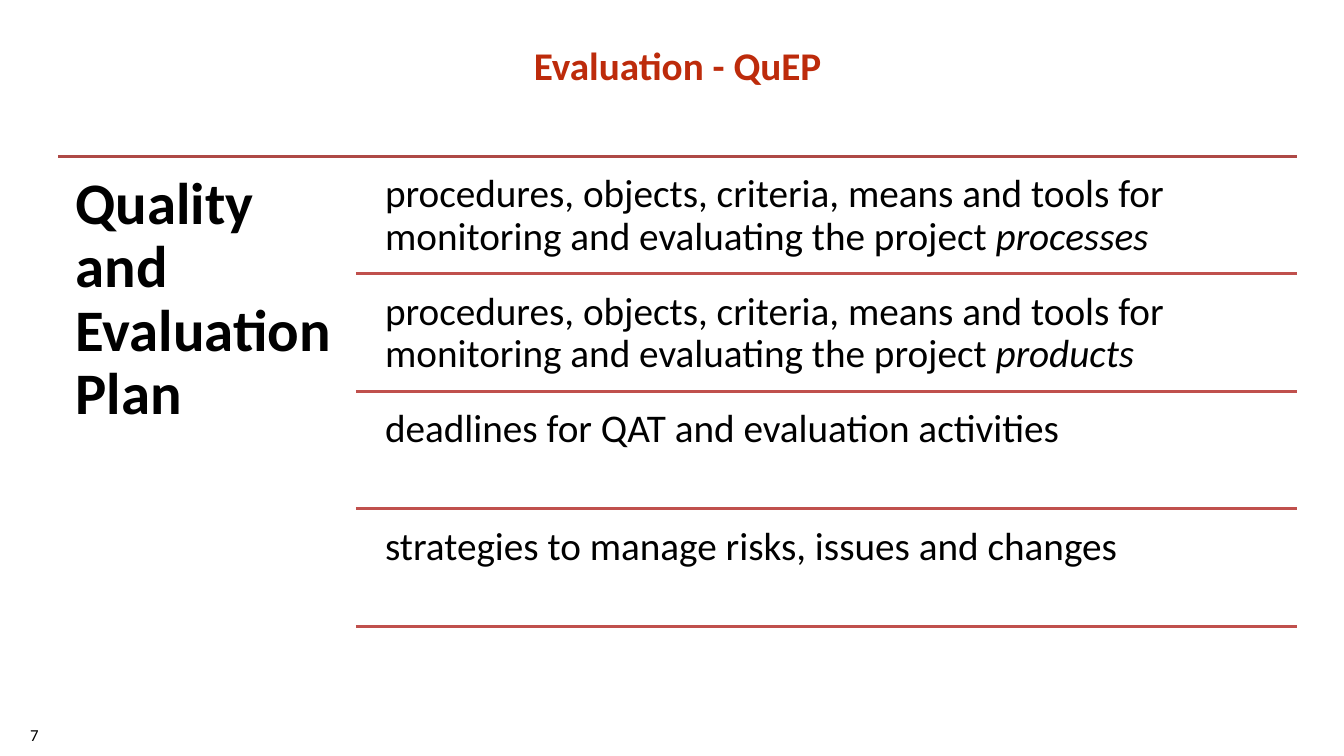
from lxml import etree
from pptx import Presentation
from pptx.dml.color import RGBColor
from pptx.enum.shapes import MSO_CONNECTOR
from pptx.enum.text import MSO_ANCHOR, MSO_AUTO_SIZE, PP_ALIGN
from pptx.oxml.ns import qn
from pptx.util import Inches, Pt

LINE = MSO_CONNECTOR.STRAIGHT
TOP = MSO_ANCHOR.TOP
FIXED = MSO_AUTO_SIZE.NONE
LEFT, MID = PP_ALIGN.LEFT, PP_ALIGN.CENTER

FONT = "Calibri"
BLACK, RED, ROSE, DARK = "000000", "BD2B0B", "C0504D", "AE4946"
SHARED = "procedures, objects, criteria, means and tools for monitoring and evaluating the project "
ROWS = [
    (SHARED, "processes"),
    (SHARED, "products"),
    ("deadlines for QAT and evaluation activities", ""),
    ("strategies to manage risks, issues and changes", ""),
]


def color(code):
    """Turn a hex string into a colour."""
    return RGBColor.from_string(code)


def write(shape, text, tail="", size=28, ink=BLACK, bold=False, align=LEFT, pad=None, space=0.9):
    """Fill a shape with one paragraph, ending in an optional italic tail."""
    frame = shape.text_frame
    frame.word_wrap = True
    frame.auto_size = FIXED
    frame.vertical_anchor = TOP
    if pad is not None:
        frame.margin_left = frame.margin_right = Inches(pad)
        frame.margin_top = frame.margin_bottom = Inches(pad)
    para = frame.paragraphs[0]
    para.alignment = align
    para.line_spacing = space
    para.space_before = Pt(0)
    for part, slant in ((text, False), (tail, True)):
        if part:
            run = para.add_run()
            run.text = part
            font = run.font
            font.name, font.size = FONT, Pt(size)
            font.bold, font.italic = bold, slant
            font.color.rgb = color(ink)


def box(slide, x, y, w, h):
    """Add an empty text box."""
    return slide.shapes.add_textbox(Inches(x), Inches(y), Inches(w), Inches(h))


def rule(slide, x, y, w, ink=ROSE):
    """Draw a flat horizontal line."""
    line = slide.shapes.add_connector(LINE, Inches(x), Inches(y), Inches(x + w), Inches(y))
    line.line.color.rgb = color(ink)
    line.line.width = Pt(2)
    etree.SubElement(line._element.spPr, qn("a:effectLst"))


def head(slide, text, x, y, w, h):
    """Place the slide title in its box."""
    title = slide.shapes.title
    title.left, title.top = Inches(x), Inches(y)
    title.width, title.height = Inches(w), Inches(h)
    write(title, text, ink=RED, bold=True, align=MID, space=Pt(22))


def plan(slide, name, rows, x, y, w, h):
    """Place the plan name on the left and its ruled rows on the right."""
    side = 2.95
    gap = 0.055
    tall = (h - gap) / len(rows) - gap
    rule(slide, x, y, w, DARK)
    write(box(slide, x, y, side, h), name, size=42, bold=True, pad=0.17)
    for i, (text, tail) in enumerate(rows):
        top = y + gap + i * (tall + gap)
        item = box(slide, x + side + 0.17, top, w - side - 0.17, tall)
        write(item, text, tail, pad=0.12)
        rule(slide, x + side, top + tall, w - side)


def foot(slide, text, x, y, w, h):
    """Place the page number."""
    write(box(slide, x, y, w, h), text, size=12, space=1.0)


def main():
    """Build and save the slide."""
    deck = Presentation()
    deck.slide_width, deck.slide_height = Inches(13.33), Inches(7.5)
    slide = deck.slides.add_slide(deck.slide_layouts[5])
    foot(slide, "7", 0.2, 7.14, 0.87, 0.3)
    head(slide, "Evaluation - QuEP", 0.58, 0.52, 12.28, 0.71)
    plan(slide, "Quality and Evaluation Plan", ROWS, 0.58, 1.55, 12.28, 4.72)
    deck.save("out.pptx")


if __name__ == "__main__":
    main()
